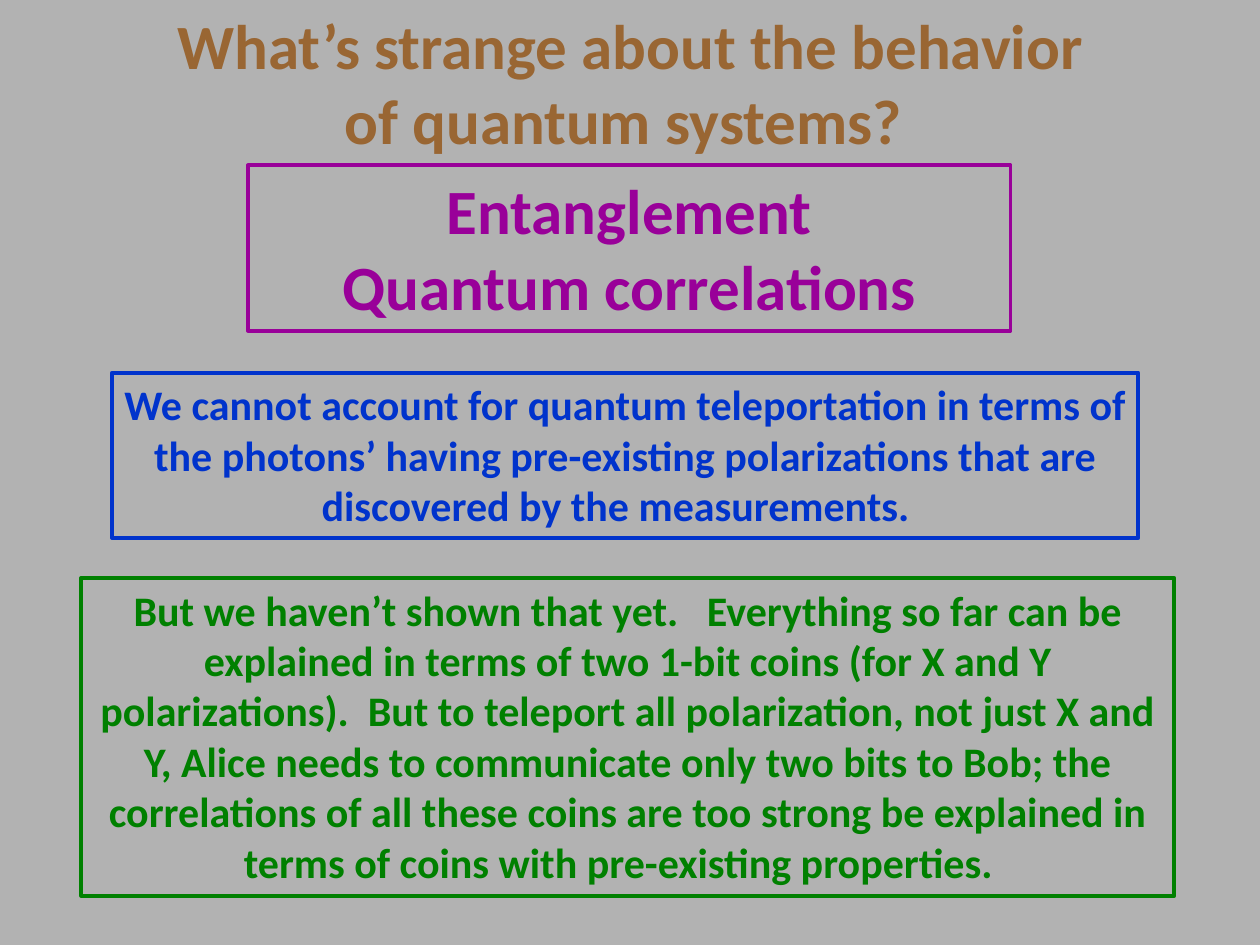
import pptx
import pptx.util
import pptx.dml.color
import pptx.enum.shapes
import pptx.enum.text

Pt = pptx.util.Pt
RGB = pptx.dml.color.RGBColor.from_string
COLORS = {
    "back": "B2B2B2",
    "title": "996633",
    "topic": "990099",
    "claim": "0033CC",
    "reply": "008000",
}


def write(shape, lines, size, color):
    frame = shape.text_frame
    frame.word_wrap = True
    frame.auto_size = pptx.enum.text.MSO_AUTO_SIZE.SHAPE_TO_FIT_TEXT
    frame.vertical_anchor = pptx.enum.text.MSO_ANCHOR.TOP
    for i, line in enumerate(lines):
        para = frame.paragraphs[0] if i == 0 else frame.add_paragraph()
        para.alignment = pptx.enum.text.PP_ALIGN.CENTER
        run = para.add_run()
        run.text = line
        run.font.name = "Calibri"
        run.font.size = Pt(size)
        run.font.bold = True
        run.font.color.rgb = RGB(color)


# Slide and background
deck = pptx.Presentation()
deck.slide_width, deck.slide_height = Pt(720), Pt(540)
slide = deck.slides.add_slide(deck.slide_layouts[6])
slide.background.fill.solid()
slide.background.fill.fore_color.rgb = RGB(COLORS["back"])

# Title
title = slide.shapes.add_textbox(Pt(87), Pt(0), Pt(546.5), Pt(94.5))
write(title, ["What’s strange about the behavior of quantum systems? "],
      36, COLORS["title"])

# Framed boxes: colour, place, text size, lines
boxes = [
    ("topic", (141.75, 94.5, 435.75, 94.5), 36,
     ["Entanglement", "Quantum correlations"]),
    ("claim", (64, 213, 586.5, 94.5), 24,
     ["We cannot account for quantum teleportation in terms of the photons’ "
      "having pre-existing polarizations that are discovered by the "
      "measurements.  "]),
    ("reply", (46.5, 330.25, 624.5, 181.75), 24,
     ["But we haven’t shown that yet.   Everything so far can be explained "
      "in terms of two 1-bit coins (for X and Y polarizations).  But to "
      "teleport all polarization, not just X and Y, Alice needs to "
      "communicate only two bits to Bob; the correlations of all these coins "
      "are too strong be explained in terms of coins with pre-existing "
      "properties.  "]),
]
for name, place, size, lines in boxes:
    box = slide.shapes.add_shape(pptx.enum.shapes.MSO_SHAPE.RECTANGLE,
                                 *[Pt(n) for n in place])
    box.shadow.inherit = False
    box.fill.background()
    box.line.color.rgb = RGB(COLORS[name])
    box.line.width = Pt(2.25)
    write(box, lines, size, COLORS[name])

deck.save("out.pptx")
